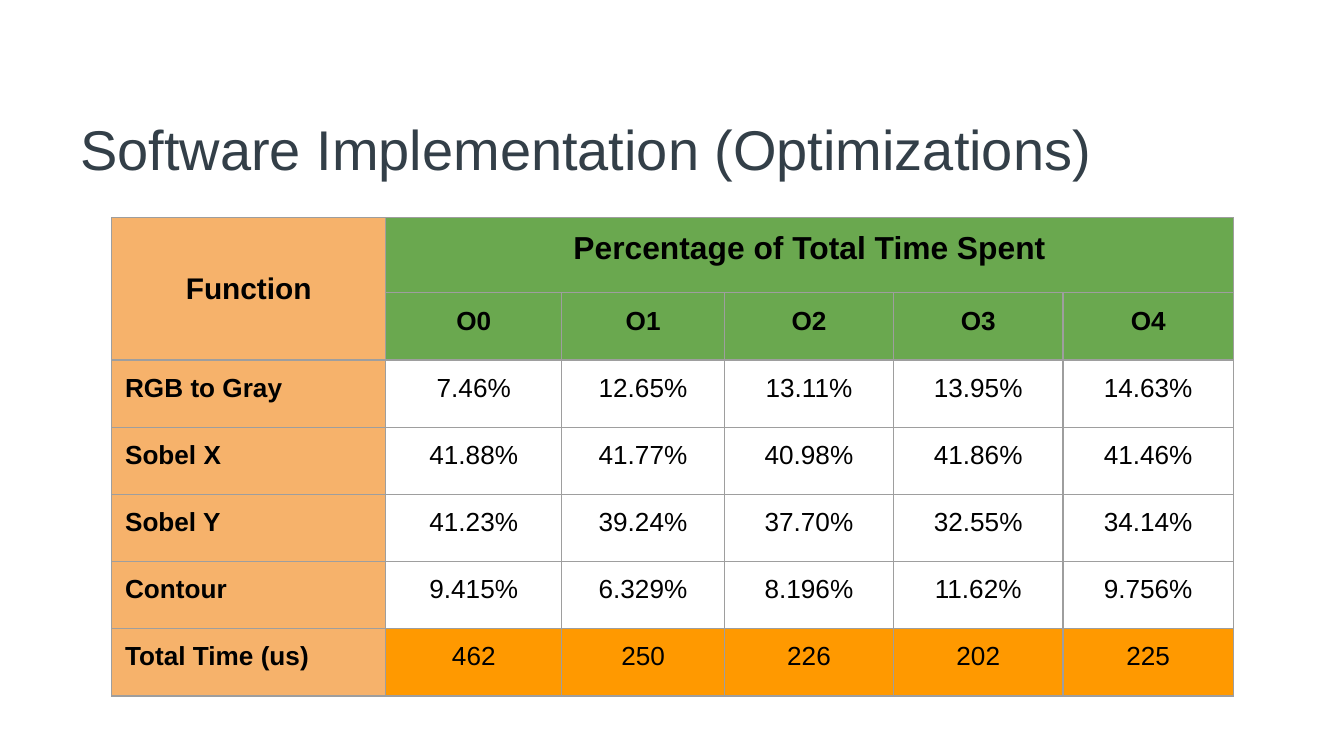
from lxml import etree
from pptx import Presentation, util as u
from pptx.dml.color import RGBColor
from pptx.enum import text
from pptx.oxml import ns

SLATE = RGBColor(0x33, 0x3F, 0x48)
BLACK = RGBColor(0, 0, 0)
PEACH = RGBColor(0xF6, 0xB2, 0x6B)
GREEN = RGBColor(0x6A, 0xA8, 0x4F)
ORANGE = RGBColor(0xFF, 0x99, 0x00)
GREY = RGBColor(0x9E, 0x9E, 0x9E)

COLUMN_WIDTHS = [146.9, 94.3, 87.1, 90.7, 90.7, 91.4]
ROW_HEIGHTS = [40.3] + [36] * 6
LEVELS = ["O0", "O1", "O2", "O3", "O4"]
TIMINGS = [
    ["RGB to Gray", "7.46%", "12.65%", "13.11%", "13.95%", "14.63%"],
    ["Sobel X", "41.88%", "41.77%", "40.98%", "41.86%", "41.46%"],
    ["Sobel Y", "41.23%", "39.24%", "37.70%", "32.55%", "34.14%"],
    ["Contour", "9.415%", "6.329%", "8.196%", "11.62%", "9.756%"],
    ["Total Time (us)", "462", "250", "226", "202", "225"],
]


class SlideBuilder:
    font_name = "Arial"
    cell_margin = u.Pt(7.2)
    border_width = u.Pt(0.75)

    def __init__(self, page):
        self.page = page

    def fill_text(self, frame, content, size, color, bold=False, align=text.PP_ALIGN.LEFT):
        frame.text = content
        para = frame.paragraphs[0]
        para.alignment = align
        for span in para.runs:
            span.font.name = self.font_name
            span.font.size = u.Pt(size)
            span.font.bold = bold
            span.font.color.rgb = color

    def title(self, content, left, top, width, height):
        box = self.page.shapes.add_textbox(u.Pt(left), u.Pt(top), u.Pt(width), u.Pt(height))
        frame = box.text_frame
        frame.word_wrap = True
        frame.vertical_anchor = text.MSO_ANCHOR.MIDDLE
        self.fill_text(frame, content, 30, SLATE)

    def table(self, left, top, widths, heights):
        frame = self.page.shapes.add_table(
            len(heights), len(widths), u.Pt(left), u.Pt(top),
            u.Pt(sum(widths)), u.Pt(sum(heights)))
        table = frame.table
        table.first_row = table.horz_banding = False
        for column, width in zip(table.columns, widths):
            column.width = u.Pt(width)
        for row, height in zip(table.rows, heights):
            row.height = u.Pt(height)
        return table

    def border(self, cell):
        properties = cell._tc.get_or_add_tcPr()
        for side in ("a:lnL", "a:lnR", "a:lnT", "a:lnB"):
            line = etree.SubElement(properties, ns.qn(side), w=str(self.border_width))
            fill = etree.SubElement(line, ns.qn("a:solidFill"))
            etree.SubElement(fill, ns.qn("a:srgbClr"), val=str(GREY))

    def cell(self, cell, content, fill=None, size=14, bold=False,
             align=text.PP_ALIGN.CENTER, anchor=text.MSO_ANCHOR.TOP):
        self.border(cell)
        if fill is None:
            cell.fill.background()
        else:
            cell.fill.solid()
            cell.fill.fore_color.rgb = fill
        cell.margin_left = cell.margin_right = self.cell_margin
        cell.margin_top = cell.margin_bottom = self.cell_margin
        cell.vertical_anchor = anchor
        self.fill_text(cell.text_frame, content, size, BLACK, bold, align)


def main():
    deck = Presentation()
    deck.slide_width, deck.slide_height = u.Pt(720), u.Pt(405)
    builder = SlideBuilder(deck.slides.add_slide(deck.slide_layouts[6]))
    builder.title("Software Implementation (Optimizations)", 36, 45.4, 648, 67.7)

    table = builder.table(59.8, 116.6, COLUMN_WIDTHS, ROW_HEIGHTS)
    table.cell(0, 0).merge(table.cell(1, 0))
    table.cell(0, 1).merge(table.cell(0, 5))
    builder.cell(table.cell(0, 0), "Function", PEACH, 16, True, anchor=text.MSO_ANCHOR.MIDDLE)
    builder.cell(table.cell(1, 0), "", PEACH)
    builder.cell(table.cell(0, 1), "Percentage of Total Time Spent", GREEN, 17, True)
    for column, level in enumerate(LEVELS, 1):
        if column > 1:
            builder.cell(table.cell(0, column), "", GREEN)
        builder.cell(table.cell(1, column), level, GREEN, bold=True)

    for row, (function, *values) in enumerate(TIMINGS, 2):
        builder.cell(table.cell(row, 0), function, PEACH, bold=True, align=text.PP_ALIGN.LEFT)
        fill = ORANGE if function.startswith("Total") else None
        for column, value in enumerate(values, 1):
            builder.cell(table.cell(row, column), value, fill)

    deck.save("out.pptx")


if __name__ == "__main__":
    main()
